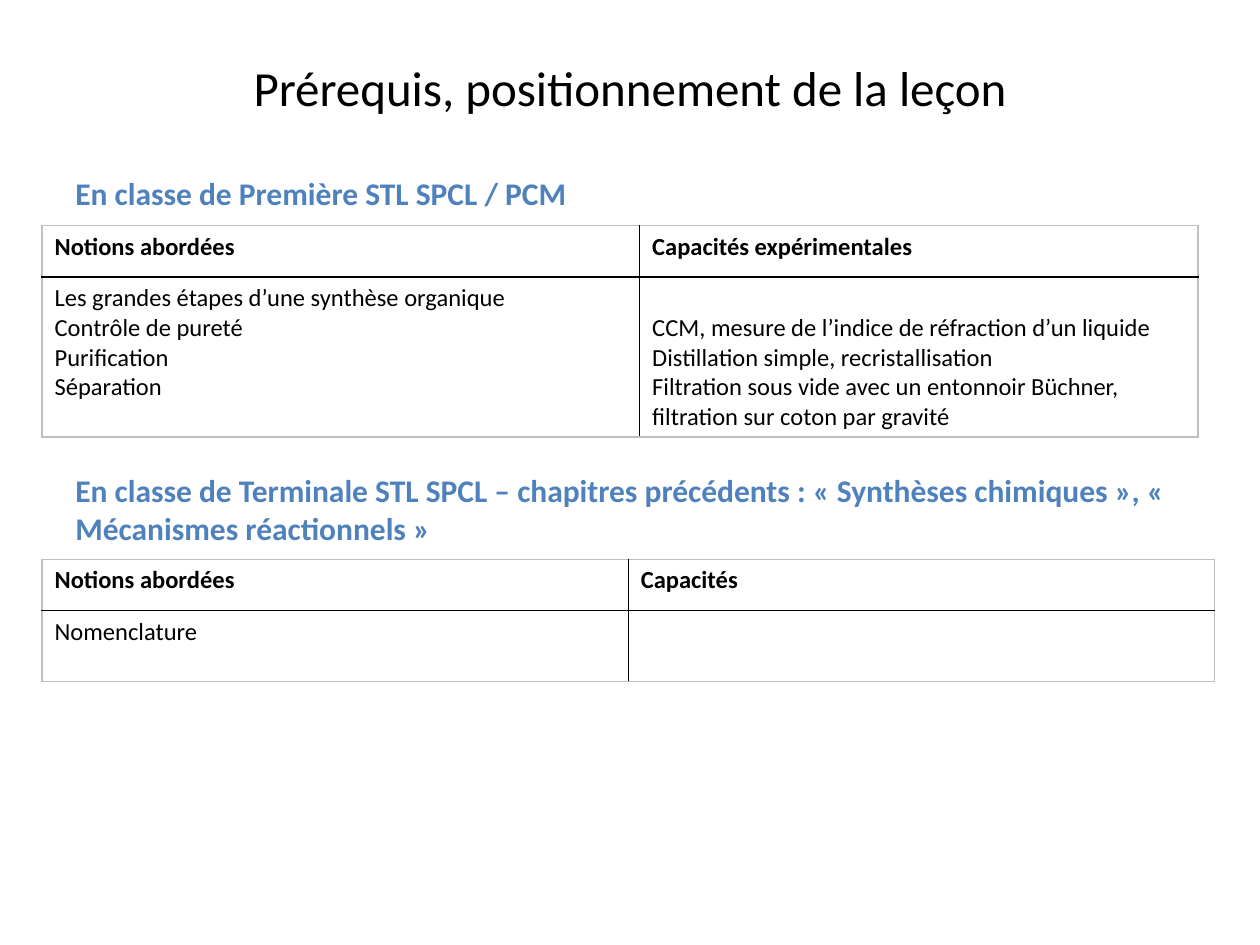
from lxml import etree
from pptx import Presentation
from pptx.dml.color import RGBColor
from pptx.enum.text import MSO_ANCHOR, PP_ALIGN
from pptx.oxml.ns import qn
from pptx.util import Pt

MIDDLE = MSO_ANCHOR.MIDDLE
CENTER = PP_ALIGN.CENTER
TITLE_ONLY = 5
FONT = "Calibri"
COLORS = {"text": "000000", "heading": "4F81BD", "frame": "BFBFBF", "paper": "FFFFFF"}
LEFT_TABLE = 24
LEFT_HEADING = 36
HEADER_HEIGHT = 29.3
CELL_MARGIN = 3.6
BODY_LINE = 17.1


class LessonSlide:
    def __init__(self, deck):
        self.slide = deck.slides.add_slide(deck.slide_layouts[TITLE_ONLY])

    def add_words(self, paragraph, words, size, color="text", bold=False):
        run = paragraph.add_run()
        run.text = words
        run.font.name = FONT
        run.font.size = Pt(size)
        run.font.bold = bold
        run.font.color.rgb = RGBColor.from_string(COLORS[color])

    def title(self, words):
        title = self.slide.shapes.title
        title.left, title.top, title.width, title.height = Pt(36), Pt(4.5), Pt(648), Pt(90)
        title.text_frame.vertical_anchor = MIDDLE
        paragraph = title.text_frame.paragraphs[0]
        paragraph.alignment = CENTER
        self.add_words(paragraph, words, 28)

    def heading(self, words, top, width, height):
        heading = self.slide.shapes.add_textbox(Pt(LEFT_HEADING), Pt(top), Pt(width), Pt(height))
        heading.text_frame.word_wrap = True
        self.add_words(heading.text_frame.paragraphs[0], words, 18, "heading", True)

    def border(self, cell, sides):
        properties = cell._tc.get_or_add_tcPr()
        for position, (side, color) in enumerate(sides.items()):
            line = etree.Element(qn(f"a:ln{side}"), w=str(Pt(1)))
            fill = etree.SubElement(line, qn("a:solidFill"))
            etree.SubElement(fill, qn("a:srgbClr"), val=COLORS[color])
            properties.insert(position, line)

    def table(self, top, column_widths, body_height, headers, bodies, skipped_lines=(0, 0)):
        row_heights = (HEADER_HEIGHT, body_height)
        table = self.slide.shapes.add_table(
            2, 2, Pt(LEFT_TABLE), Pt(top), Pt(sum(column_widths)), Pt(sum(row_heights))
        ).table
        table.first_row = False
        table.horz_banding = False
        for column, width in zip(table.columns, column_widths):
            column.width = Pt(width)
        for row, height in zip(table.rows, row_heights):
            row.height = Pt(height)
        for row, contents in enumerate(([[header] for header in headers], bodies)):
            for column, lines in enumerate(contents):
                cell = table.cell(row, column)
                cell.fill.solid()
                cell.fill.fore_color.rgb = RGBColor.from_string(COLORS["paper"])
                skipped = skipped_lines[column] if row else 0
                cell.margin_top = Pt(CELL_MARGIN + skipped * BODY_LINE)
                for number, words in enumerate(lines):
                    frame = cell.text_frame
                    paragraph = frame.add_paragraph() if number else frame.paragraphs[0]
                    self.add_words(paragraph, words, 14, bold=row == 0)
                self.border(cell, {
                    "L": "text" if column else "frame",
                    "R": "frame" if column else "text",
                    "T": "text" if row else "frame",
                    "B": "frame" if row else "text",
                })


def main():
    deck = Presentation()
    deck.slide_width, deck.slide_height = Pt(720), Pt(540)
    lesson = LessonSlide(deck)
    lesson.title("Prérequis, positionnement de la leçon")

    lesson.heading("En classe de Première STL SPCL / PCM", 96, 360, 29)
    lesson.table(
        128.9, (341.5, 319), 91,
        ("Notions abordées", "Capacités expérimentales"),
        (
            ("Les grandes étapes d’une synthèse organique", "Contrôle de pureté",
             "Purification", "Séparation"),
            ("CCM, mesure de l’indice de réfraction d’un liquide",
             "Distillation simple, recristallisation",
             "Filtration sous vide avec un entonnoir Büchner, filtration sur coton par gravité"),
        ),
        skipped_lines=(0, 1),
    )

    lesson.heading(
        "En classe de Terminale STL SPCL – chapitres précédents : "
        "« Synthèses chimiques », « Mécanismes réactionnels »",
        265.5, 676, 51,
    )
    lesson.table(
        319.6, (335, 335), 40.7,
        ("Notions abordées", "Capacités"),
        (("Nomenclature",), ()),
    )
    deck.save("out.pptx")


if __name__ == "__main__":
    main()
